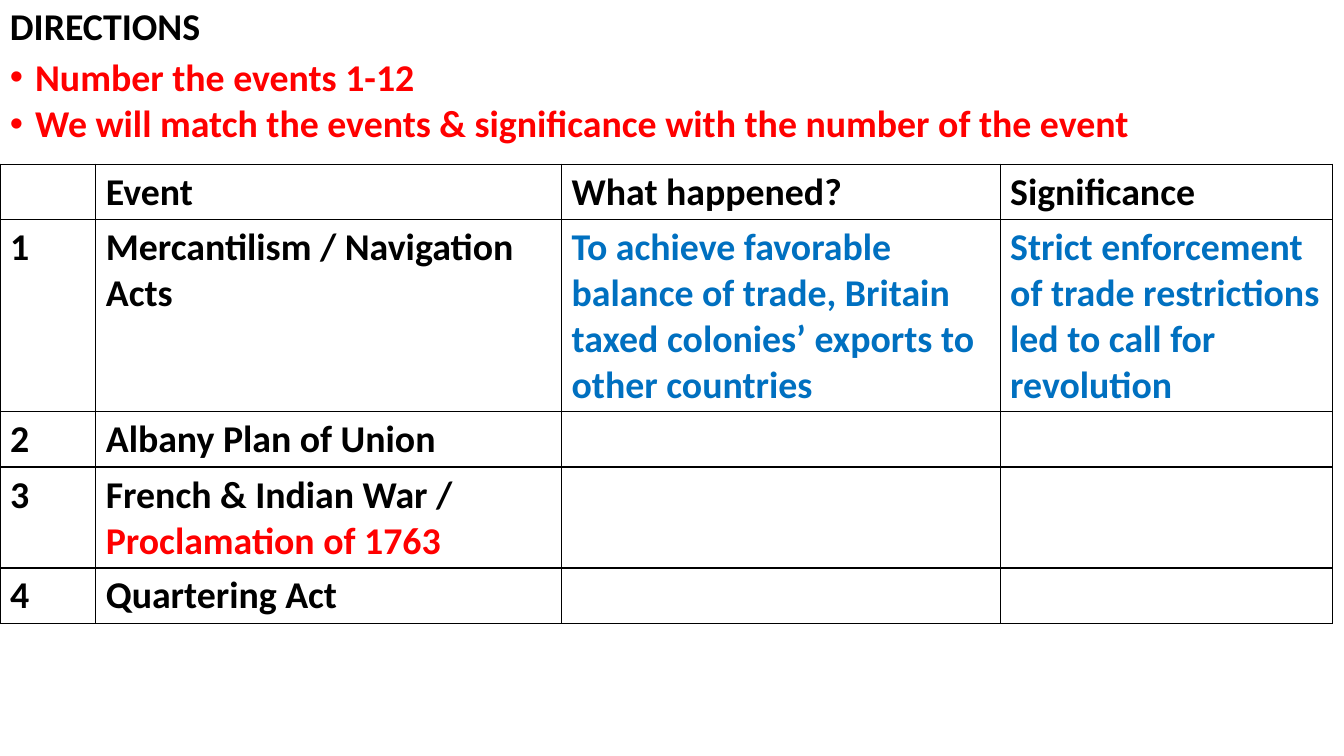
from lxml.etree import SubElement
from pptx import Presentation
from pptx.dml.color import RGBColor
from pptx.enum.text import MSO_ANCHOR as Anchor
from pptx.oxml.ns import qn
from pptx.util import Inches, Pt

BLACK = RGBColor(0x00, 0x00, 0x00)
RED = RGBColor(0xFF, 0x00, 0x00)
BLUE = RGBColor(0x00, 0x70, 0xC0)

WIDTH, HEIGHT = 13.33, 7.5
COLUMNS = [0.95, 4.62, 4.35, 3.3]
LINE = 0.45          # height of one text line in the table
CELL_PADDING = 0.1   # top and bottom margin together

# Each cell is a list of (text, colour) spans
HEADINGS = ["", "Event", "What happened?", "Significance"]
EVENTS = [
    [("Mercantilism / Navigation Acts", BLACK)],
    [("Albany Plan of Union", BLACK)],
    [("French & Indian War / ", BLACK), ("Proclamation of 1763", RED)],
    [("Quartering Act", BLACK)],
]
ANSWERS = {
    1: ["To achieve favorable balance of trade, Britain taxed colonies’ exports to other countries",
        "Strict enforcement of trade restrictions led to call for revolution"],
}
LINES_PER_ROW = [1, 4, 1, 2, 1]


def write(para, spans):
    """Fill a paragraph with bold spans, each in its own colour."""
    para.font.name, para.font.size, para.font.bold = "Calibri", Pt(27), True
    for text, colour in spans:
        span = para.add_run()
        span.text = text
        span.font.color.rgb = colour


def add_bullet(para):
    properties = para._p.get_or_add_pPr()
    properties.set("marL", str(Inches(0.25)))
    properties.set("indent", str(-Inches(0.25)))
    font = SubElement(properties, qn("a:buFont"), typeface="Arial")
    bullet = SubElement(properties, qn("a:buChar"), char="•")
    properties.find(qn("a:defRPr")).addprevious(font)
    font.addnext(bullet)


def add_text(page, top, width, height, lines, colour, space, anchor=Anchor.TOP, bullets=False):
    box = page.shapes.add_textbox(0, Inches(top), Inches(width), Inches(height))
    frame = box.text_frame
    frame.word_wrap = True
    frame.vertical_anchor = anchor
    for index, line in enumerate(lines):
        para = frame.add_paragraph() if index else frame.paragraphs[0]
        para.line_spacing = 0.9
        para.space_before = Pt(space)
        write(para, [(line, colour)])
        if bullets:
            add_bullet(para)


def add_borders(cell):
    properties = cell._tc.get_or_add_tcPr()
    for position, side in enumerate(("lnL", "lnR", "lnT", "lnB")):
        border = SubElement(properties, qn(f"a:{side}"), w=str(Pt(1)))
        fill = SubElement(border, qn("a:solidFill"))
        SubElement(fill, qn("a:srgbClr"), val=str(BLACK))
        properties.insert(position, border)


def add_event_table(page, top, rows):
    heights = [LINE * lines + CELL_PADDING for lines in LINES_PER_ROW]
    table = page.shapes.add_table(
        len(rows), len(COLUMNS), 0, Inches(top),
        Inches(sum(COLUMNS)), Inches(sum(heights))).table
    table.first_row = table.horz_banding = False
    for column, width in zip(table.columns, COLUMNS):
        column.width = Inches(width)
    for row, height, contents in zip(table.rows, heights, rows):
        row.height = Inches(height)
        for cell, spans in zip(row.cells, contents):
            cell.fill.background()
            add_borders(cell)
            write(cell.text_frame.paragraphs[0], spans)


def event_rows():
    rows = [[[(heading, BLACK)] if heading else [] for heading in HEADINGS]]
    for number, event in enumerate(EVENTS, start=1):
        answers = [[(text, BLUE)] for text in ANSWERS.get(number, [])] or [[], []]
        rows.append([[(str(number), BLACK)], event, *answers])
    return rows


def main():
    deck = Presentation()
    deck.slide_width, deck.slide_height = Inches(WIDTH), Inches(HEIGHT)
    page = deck.slides.add_slide(deck.slide_layouts[6])

    # Directions
    add_text(page, 0.02, 5.64, 0.51, ["DIRECTIONS"], BLACK, 10, Anchor.BOTTOM)
    add_text(page, 0.53, WIDTH, 1.24,
             ["Number the events 1-12",
              "We will match the events & significance with the number of the event"],
             RED, 4, bullets=True)

    # Events
    add_event_table(page, 1.63, event_rows())
    deck.save("out.pptx")


if __name__ == "__main__":
    main()
